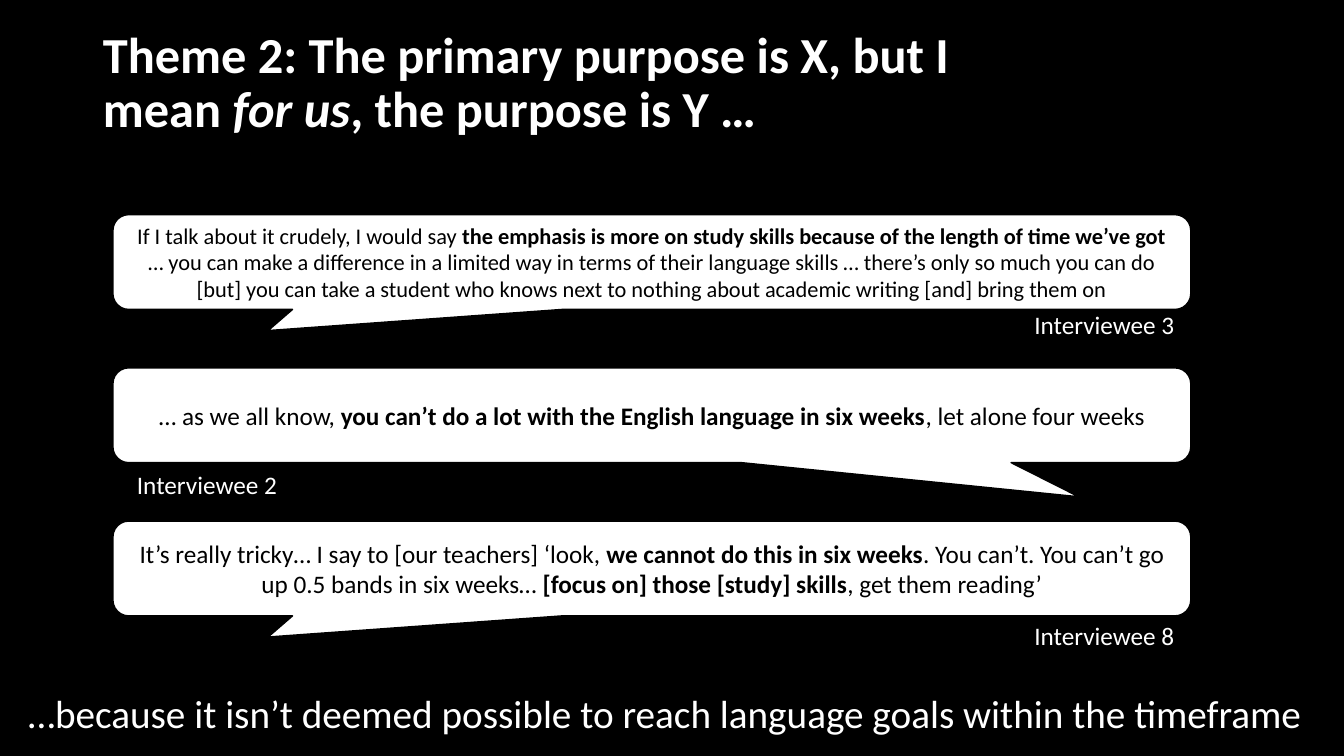
from dataclasses import dataclass
from pptx import Presentation
from pptx import util as u
from pptx.dml.color import RGBColor
from pptx.enum import shapes, text

BLACK = RGBColor(0, 0, 0)
WHITE = RGBColor(255, 255, 255)
FACE = "Calibri"
LEFT, TOP, STEP = 1.12, 2.13, 1.52
WIDE, HIGH = 10.69, 0.94
TAIL_LEFT = (-0.356, 0.723, 0.167)
TAIL_RIGHT = (0.396, 0.86, 0.167)

Run = tuple[str, str]


@dataclass
class Quote:
    runs: list[Run]
    size: int
    tail: tuple[float, float, float]


@dataclass
class Label:
    words: str
    box: tuple[float, float, float, float]
    size: int = 18


TITLE: list[Run] = [
    ("Theme 2: The primary purpose is X, but I mean ", "bold"),
    ("for us", "bold italic"),
    (", the purpose is Y …", "bold"),
]

QUOTES = [
    Quote([
        ("If I talk about it crudely, I would say ", ""),
        ("the emphasis is more on study skills because of the length of time we’ve got ", "bold"),
        ("… you can make a difference in a limited way in terms of their language skills … "
         "there’s only so much you can do [but] you can take a student who knows next to "
         "nothing about academic writing [and] bring them on", ""),
    ], 16, TAIL_LEFT),
    Quote([
        ("… as we all know, ", ""),
        ("you can’t do a lot with the English language in six weeks", "bold"),
        (", let alone four weeks", ""),
    ], 18, TAIL_RIGHT),
    Quote([
        ("It’s really tricky… I say to [our teachers] ‘look, ", ""),
        ("we cannot do this in six weeks", "bold"),
        (". You can’t. You can’t go up 0.5 bands in six weeks… ", ""),
        ("[focus on] those [study] skills", "bold"),
        (", get them reading’", ""),
    ], 18, TAIL_LEFT),
]

LABELS = [
    Label("Interviewee 3", (10.16, 3.02, 1.61, 0.4)),
    Label("Interviewee 2", (1.26, 4.61, 1.61, 0.4)),
    Label("Interviewee 8", (10.16, 6.11, 1.61, 0.4)),
    Label("…because it isn’t deemed possible to reach language goals within the timeframe",
          (0.18, 6.79, 12.97, 0.57), 28),
]


def apply(thing, form: dict) -> None:
    for key, value in form.items():
        setattr(thing, key, value)


def write(frame, runs: list[Run], size: int, color: RGBColor, para: dict) -> None:
    line = frame.paragraphs[0]
    apply(line, para)
    for words, style in runs:
        run = line.add_run()
        run.text = words
        apply(run.font, {"name": FACE, "size": u.Pt(size),
                         "bold": "bold" in style, "italic": "italic" in style})
        run.font.color.rgb = color


def add_title(slide) -> None:
    title = slide.shapes.title
    apply(title, {"left": u.Inches(0.92), "top": u.Inches(0.11),
                  "width": u.Inches(9.85), "height": u.Inches(1.45)})
    apply(title.text_frame, {"vertical_anchor": text.MSO_ANCHOR.MIDDLE,
                             "auto_size": text.MSO_AUTO_SIZE.NONE, "word_wrap": True})
    write(title.text_frame, TITLE, 36, WHITE,
          {"alignment": text.PP_ALIGN.LEFT, "line_spacing": 0.9})


def add_quote(slide, quote: Quote, top: float) -> None:
    shape = slide.shapes.add_shape(
        shapes.MSO_SHAPE.ROUNDED_RECTANGULAR_CALLOUT,
        u.Inches(LEFT), u.Inches(top), u.Inches(WIDE), u.Inches(HIGH))
    for spot, value in enumerate(quote.tail):
        shape.adjustments[spot] = value
    shape.shadow.inherit = False
    shape.fill.solid()
    shape.fill.fore_color.rgb = WHITE
    shape.line.color.rgb = BLACK
    shape.line.width = u.Pt(1)
    apply(shape.text_frame, {"vertical_anchor": text.MSO_ANCHOR.MIDDLE, "word_wrap": True})
    write(shape.text_frame, quote.runs, quote.size, BLACK,
          {"alignment": text.PP_ALIGN.CENTER})


def add_label(slide, label: Label) -> None:
    frame = slide.shapes.add_textbox(*map(u.Inches, label.box)).text_frame
    apply(frame, {"word_wrap": False, "auto_size": text.MSO_AUTO_SIZE.SHAPE_TO_FIT_TEXT})
    write(frame, [(label.words, "")], label.size, WHITE, {"alignment": text.PP_ALIGN.LEFT})


def main() -> None:
    deck = Presentation()
    apply(deck, {"slide_width": u.Inches(13.33), "slide_height": u.Inches(7.5)})
    slide = deck.slides.add_slide(deck.slide_layouts.get_by_name("Title Only"))
    slide.background.fill.solid()
    slide.background.fill.fore_color.rgb = BLACK
    add_title(slide)
    for row, quote in enumerate(QUOTES):
        add_quote(slide, quote, TOP + row * STEP)
    for label in LABELS:
        add_label(slide, label)
    deck.save("out.pptx")


if __name__ == "__main__":
    main()
